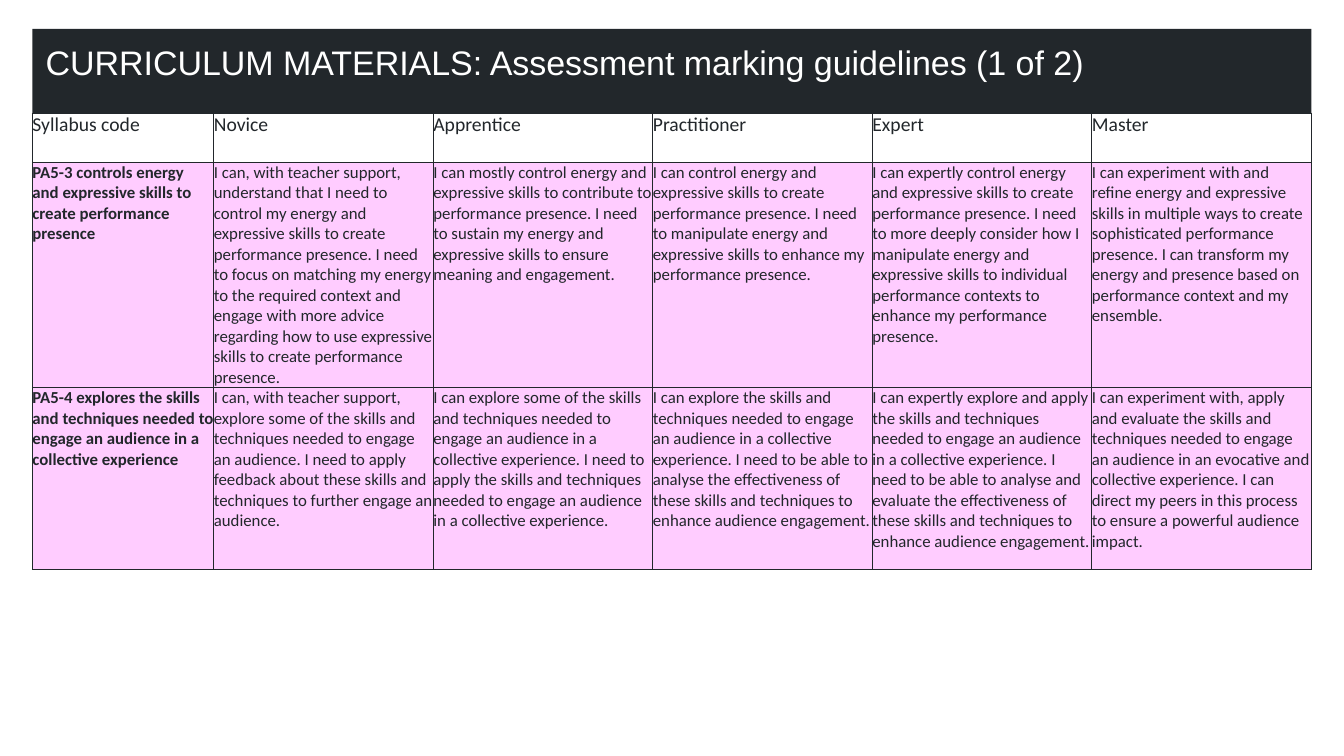
"""Build the assessment marking guidelines slide."""
from lxml.etree import SubElement
from pptx import Presentation
from pptx.dml.color import RGBColor
from pptx.enum.shapes import MSO_SHAPE as Preset
from pptx.enum.text import MSO_ANCHOR as Anchor, PP_ALIGN as Align
from pptx.oxml.ns import qn
from pptx.util import Pt

TITLE = "CURRICULUM MATERIALS: Assessment marking guidelines (1 of 2)"
LEVELS = ["Syllabus code", "Novice", "Apprentice", "Practitioner", "Expert", "Master"]
OUTCOMES = [
    [
        "PA5-3 controls energy and expressive skills to create performance presence",
        "I can, with teacher support, understand that I need to control my energy and "
        "expressive skills to create performance presence. I need to focus on matching my "
        "energy to the required context and engage with more advice regarding how to use "
        "expressive skills to create performance presence.",
        "I can mostly control energy and expressive skills to contribute to performance "
        "presence. I need to sustain my energy and expressive skills to ensure meaning and "
        "engagement.",
        "I can control energy and expressive skills to create performance presence. I need to "
        "manipulate energy and expressive skills to enhance my performance presence.",
        "I can expertly control energy and expressive skills to create performance presence. "
        "I need to more deeply consider how I manipulate energy and expressive skills to "
        "individual performance contexts to enhance my performance presence.",
        "I can experiment with and refine energy and expressive skills in multiple ways to "
        "create sophisticated performance presence. I can transform my energy and presence "
        "based on performance context and my ensemble.",
    ],
    [
        "PA5-4 explores the skills and techniques needed to engage an audience in a "
        "collective experience",
        "I can, with teacher support, explore some of the skills and techniques needed to "
        "engage an audience. I need to apply feedback about these skills and techniques to "
        "further engage an audience.",
        "I can explore some of the skills and techniques needed to engage an audience in a "
        "collective experience. I need to apply the skills and techniques needed to engage an "
        "audience in a collective experience.",
        "I can explore the skills and techniques needed to engage an audience in a collective "
        "experience. I need to be able to analyse the effectiveness of these skills and "
        "techniques to enhance audience engagement.",
        "I can expertly explore and apply the skills and techniques needed to engage an "
        "audience in a collective experience. I need to be able to analyse and evaluate the "
        "effectiveness of these skills and techniques to enhance audience engagement.",
        "I can experiment with, apply and evaluate the skills and techniques needed to engage "
        "an audience in an evocative and collective experience. I can direct my peers in this "
        "process to ensure a powerful audience impact.",
    ],
]

INK = RGBColor(0x22, 0x27, 0x2B)
PINK = RGBColor(0xFF, 0xCC, 0xFF)
WHITE = RGBColor(0xFF, 0xFF, 0xFF)

SLIDE_WIDTH, SLIDE_HEIGHT = 960, 540
LEFT, BANNER_TOP, BANNER_HEIGHT = 23.2, 20.6, 60.2
GRID_TOP = BANNER_TOP + BANNER_HEIGHT
CODE_WIDTH, LEVEL_WIDTH = 129.6, 156.8
COLUMN_WIDTHS = [CODE_WIDTH] + [LEVEL_WIDTH] * (len(LEVELS) - 1)
ROW_HEIGHTS = [35.3, 158.4, 129.6]
GRID_WIDTH = sum(COLUMN_WIDTHS)


def write(paragraph, text, font, size, color, bold=False):
    paragraph.alignment = Align.LEFT
    run = paragraph.add_run()
    run.text = text
    run.font.name = font
    run.font.size = Pt(size)
    run.font.color.rgb = color
    run.font.bold = bold


def set_margins(box, margin):
    box.margin_left = box.margin_right = box.margin_top = box.margin_bottom = Pt(margin)
    box.vertical_anchor = Anchor.TOP


def draw_borders(cell):
    properties = cell._tc.get_or_add_tcPr()
    for side in ("a:lnL", "a:lnR", "a:lnT", "a:lnB"):
        line = SubElement(properties, qn(side), w=str(Pt(1)))
        SubElement(SubElement(line, qn("a:solidFill")), qn("a:srgbClr"), val=str(INK))


def add_banner(slide):
    banner = slide.shapes.add_shape(
        Preset.RECTANGLE, Pt(LEFT), Pt(BANNER_TOP), Pt(GRID_WIDTH), Pt(BANNER_HEIGHT))
    banner.shadow.inherit = False
    banner.fill.solid()
    banner.fill.fore_color.rgb = INK
    banner.line.fill.background()
    frame = banner.text_frame
    frame.word_wrap = True
    set_margins(frame, 9.4)
    write(frame.paragraphs[0], TITLE, "Arial", 24.3, WHITE)


def add_guidelines(slide):
    rows = [LEVELS] + OUTCOMES
    guidelines = slide.shapes.add_table(
        len(rows), len(LEVELS), Pt(LEFT), Pt(GRID_TOP),
        Pt(GRID_WIDTH), Pt(sum(ROW_HEIGHTS))).table
    guidelines.first_row = guidelines.horz_banding = False
    for column, width in zip(guidelines.columns, COLUMN_WIDTHS):
        column.width = Pt(width)
    for row_index, (texts, height) in enumerate(zip(rows, ROW_HEIGHTS)):
        guidelines.rows[row_index].height = Pt(height)
        is_header = row_index == 0
        for column_index, text in enumerate(texts):
            cell = guidelines.cell(row_index, column_index)
            set_margins(cell, 0)
            draw_borders(cell)
            if is_header:
                cell.fill.background()
            else:
                cell.fill.solid()
                cell.fill.fore_color.rgb = PINK
            write(cell.text_frame.paragraphs[0], text, "Calibri", 14 if is_header else 12,
                  INK, bold=column_index == 0 and not is_header)


def main():
    deck = Presentation()
    deck.slide_width, deck.slide_height = Pt(SLIDE_WIDTH), Pt(SLIDE_HEIGHT)
    slide = deck.slides.add_slide(deck.slide_layouts[6])
    add_banner(slide)
    add_guidelines(slide)
    deck.save("out.pptx")


if __name__ == "__main__":
    main()
